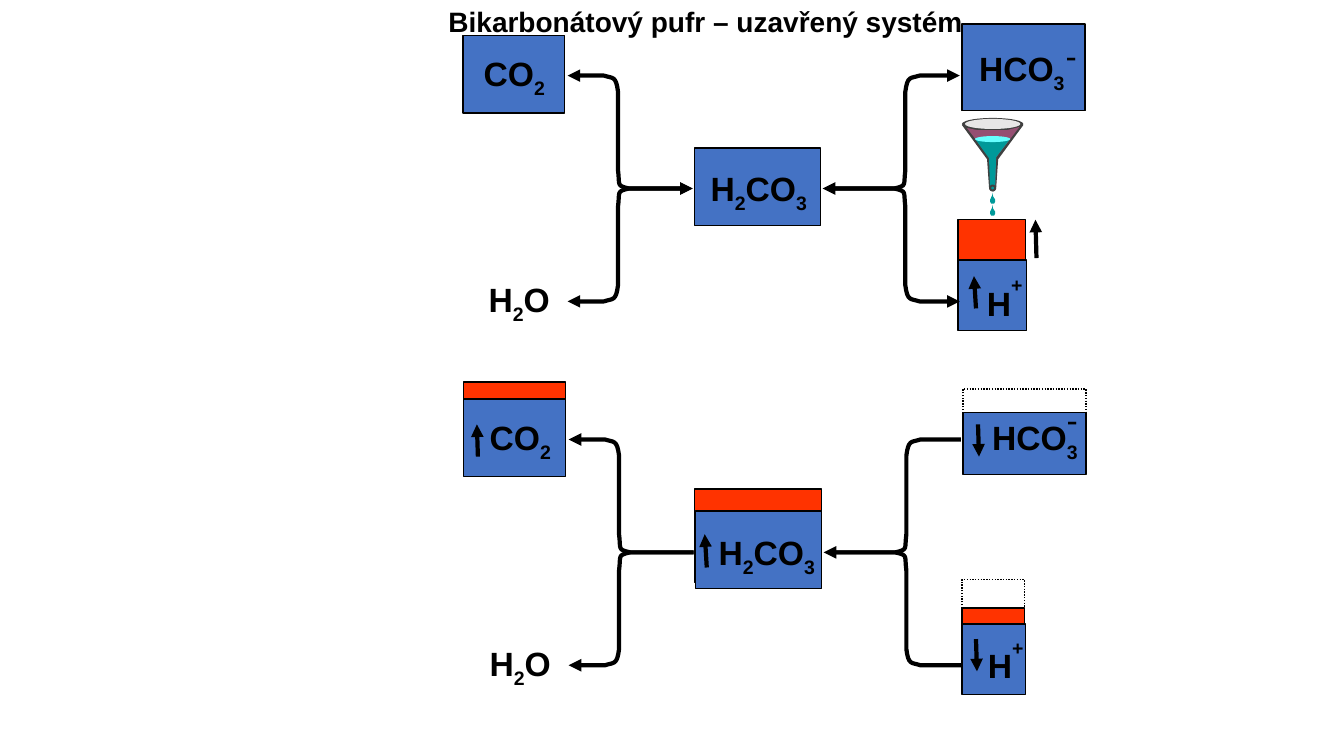
from lxml.etree import SubElement
from pptx import Presentation
from pptx.dml.color import RGBColor
from pptx.enum.dml import MSO_LINE
from pptx.enum.shapes import MSO_CONNECTOR, MSO_SHAPE
from pptx.enum.text import MSO_AUTO_SIZE, PP_ALIGN
from pptx.oxml.ns import qn
from pptx.util import Inches, Pt

BLACK, BLUE, RED, DARK, TEAL = "000000", "4472C4", "FF3300", "404040", "009999"
TITLE = "Bikarbonátový pufr – uzavřený systém"
CO2 = [("CO", 0), ("2", -25)]
H2O = [("H", 0), ("2", -25), ("O", 0)]
H2CO3 = [("H", 0), ("2", -25), ("CO", 0), ("3", -25)]
HCO3 = [("HCO", 0), ("3", -25)]
PROTON = [("H", 0), ("+", 70)]
MINUS = [("-", 0)]

BOXES = [
    (9.5, 2.18, 0.67, 1.09, RED), (9.5, 2.58, 0.68, 0.7, BLUE),
    (9.54, 0.25, 1.22, 0.84, None), (9.54, 0.24, 1.22, 0.86, BLUE),
    (6.89, 1.47, 1.25, 0.77, BLUE), (4.59, 0.35, 1.01, 0.77, BLUE),
    (4.6, 3.79, 1.01, 0.93, RED), (6.89, 4.85, 1.26, 0.93, RED),
    (9.54, 5.75, 0.62, 0.91, None), (9.54, 6.03, 0.62, 0.82, RED),
    (9.54, 6.19, 0.63, 0.7, BLUE), (9.55, 3.86, 1.22, 0.84, None),
    (9.55, 4.09, 1.22, 0.62, BLUE), (6.9, 5.07, 1.25, 0.77, BLUE),
    (4.6, 3.96, 1.01, 0.77, BLUE),
]
LABELS = [
    (4.69, 0.48, 0.82, CO2), (4.74, 2.72, 0.82, H2O), (6.93, 1.62, 1.19, H2CO3),
    (9.6, 0.43, 1.07, HCO3), (9.68, 2.66, 0.57, PROTON),
    (4.75, 4.09, 0.82, CO2), (4.75, 6.33, 0.82, H2O), (7.01, 5.23, 1.19, H2CO3),
    (9.73, 4.09, 1.07, HCO3), (9.69, 6.26, 0.57, PROTON),
]
CHARGES = [(10.47, 0.3, 0.31, MINUS), (10.48, 3.91, 0.31, MINUS)]
ARROWS = [
    (9.68, 3.06, 9.66, 2.74), (10.28, 2.56, 10.27, 2.18), (9.68, 6.34, 9.69, 6.66),
    (9.7, 4.21, 9.71, 4.53), (7.01, 5.63, 6.99, 5.3), (4.74, 4.53, 4.73, 4.21),
]
BRACKETS = [
    (8.26, 8.98, 9.52, 1.87, -1, False, True), (8.16, 8.98, 9.52, 1.87, 1, True, True),
    (6.87, 6.13, 5.63, 1.87, -1, True, True), (6.87, 6.13, 5.63, 1.87, 1, True, True),
    (8.27, 8.99, 9.53, 5.48, -1, False, False), (8.17, 8.99, 9.53, 5.48, 1, True, False),
    (6.88, 6.14, 5.64, 5.48, -1, False, True), (6.88, 6.14, 5.64, 5.48, 1, False, True),
]
CONE = [(9.54, 1.24), (9.79, 1.58), (9.81, 1.87), (9.82, 1.89), (9.85, 1.9),
        (9.87, 1.89), (9.88, 1.87), (9.9, 1.58), (10.15, 1.24)]
INSIDE = [(9.59, 1.27), (9.82, 1.57), (9.82, 1.86), (9.85, 1.88), (9.87, 1.86),
          (9.88, 1.56), (10.11, 1.26), (9.99, 1.29), (9.69, 1.29)]
LIQUID = [(9.68, 1.39), (9.81, 1.57), (9.82, 1.87), (9.85, 1.89), (9.87, 1.87),
          (9.88, 1.56), (10.01, 1.39)]
DROP = [(9.84, 0), (9.85, 0.04), (9.87, 0.07), (9.87, 0.09), (9.86, 0.11),
        (9.84, 0.11), (9.83, 0.11), (9.82, 0.09), (9.82, 0.07), (9.84, 0.03)]

prs = Presentation()
prs.slide_width, prs.slide_height = Inches(13.33), Inches(7.5)
s = prs.slides.add_slide(prs.slide_layouts[6])


def rgb(color):
    return RGBColor.from_string(color)


def paint(sp, fill=None, line=None, width=1.0, dash=None):
    sp.shadow.inherit = False
    if fill:
        sp.fill.solid()
        sp.fill.fore_color.rgb = rgb(fill)
    else:
        sp.fill.background()
    if line:
        sp.line.color.rgb = rgb(line)
        sp.line.width = Pt(width)
        if dash:
            sp.line.dash_style = dash
    else:
        sp.line.fill.background()


def shape(parent, kind, x, y, w, h, **style):
    sp = parent.shapes.add_shape(kind, Inches(x), Inches(y), Inches(w), Inches(h))
    paint(sp, **style)


def outline(parent, points, close=True, **style):
    (x, y), *rest = [(Inches(px), Inches(py)) for px, py in points]
    builder = parent.shapes.build_freeform(x, y)
    builder.add_line_segments(rest, close=close)
    sp = builder.convert_to_shape()
    paint(sp, **style)
    return sp


def arrowheads(sp, head=False, tail=False):
    ln = sp.line._get_or_add_ln()
    for tag, wanted in (("a:headEnd", head), ("a:tailEnd", tail)):
        if wanted:
            SubElement(ln, qn(tag)).set("type", "triangle")


def label(x, y, w, runs, h=0.5, size=24, bold=True, wrap=False):
    tf = s.shapes.add_textbox(Inches(x), Inches(y), Inches(w), Inches(h)).text_frame
    tf.word_wrap = wrap
    tf.auto_size = MSO_AUTO_SIZE.SHAPE_TO_FIT_TEXT
    p = tf.paragraphs[0]
    p.alignment = PP_ALIGN.CENTER
    for text, base in runs:
        r = p.add_run()
        r.text = text
        r.font.name, r.font.size, r.font.bold = "Arial", Pt(size), bold
        r.font.color.rgb = rgb(BLACK)
        if base:
            r._r.get_or_add_rPr().set("baseline", str(base * 1000))


def curve(a, b, c, d, steps=8):
    for i in range(steps + 1):
        t = i / steps
        u = 1 - t
        yield tuple(u**3 * k + 3 * u * u * t * m + 3 * u * t * t * n + t**3 * o
                    for k, m, n, o in zip(a, b, c, d))


def bracket(inner, spine, outer, mid, up, head, tail):
    side = 1 if outer > inner else -1

    def bend(*offsets):
        return curve(*[(spine + side * dx, mid + up * dy) for dx, dy in offsets])

    points = [(inner, mid),
              *bend((-0.11, 0), (0.02, 0.03), (-0.02, 0.03), (0, 0.18)),
              *bend((0, 0.96), (0.02, 1.12), (0.05, 1.09), (0.14, 1.12)),
              (outer, mid + up * 1.12)]
    arrowheads(outline(s, points, close=False, line=BLACK, width=3), head, tail)


def arrow(x1, y1, x2, y2):
    c = s.shapes.add_connector(MSO_CONNECTOR.STRAIGHT, Inches(x1), Inches(y1),
                               Inches(x2), Inches(y2))
    c.line.color.rgb = rgb(BLACK)
    c.line.width = Pt(3)
    arrowheads(c, tail=True)
    SubElement(c._element.spPr, qn("a:effectLst"))


def funnel():
    g = s.shapes.add_group_shape()
    oval = MSO_SHAPE.OVAL
    outline(g, CONE, fill=DARK)
    shape(g, oval, 9.54, 1.17, 0.61, 0.12, fill=DARK)
    outline(g, INSIDE, fill="954F72")
    outline(g, LIQUID, fill=TEAL)
    shape(g, oval, 9.57, 1.18, 0.55, 0.1, fill="E7E6E6")
    for top in (1.91, 2.03):
        outline(g, [(x, top + y) for x, y in DROP], fill=TEAL)
    shape(g, oval, 9.67, 1.35, 0.35, 0.06, fill="66FFFF")
    shape(g, oval, 9.82, 1.84, 0.05, 0.05, fill=TEAL, line=DARK, width=1.38)


for *place, fill in BOXES:
    shape(s, MSO_SHAPE.RECTANGLE, *place, fill=fill, line=BLACK,
          dash=None if fill else MSO_LINE.ROUND_DOT)
for item in LABELS:
    label(*item, wrap=item[3] is PROTON)
for item in CHARGES:
    label(*item, bold=False)
for item in BRACKETS:
    bracket(*item)
funnel()
for item in ARROWS:
    arrow(*item)
label(4.33, 0, 5.34, [(TITLE, 0)], h=0.44, size=20)

prs.save("out.pptx")
